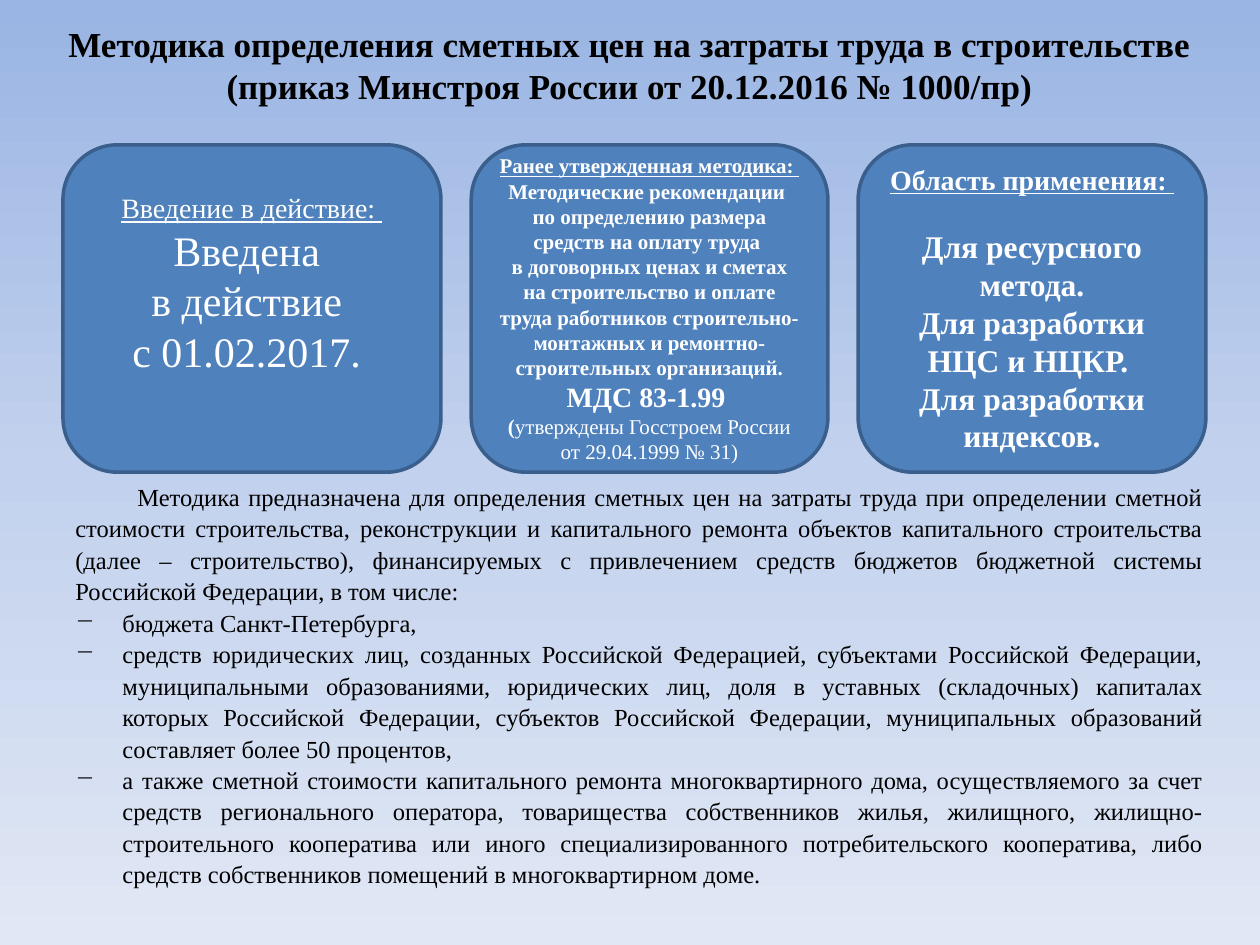
"""Build a slide on the method for estimating labour costs in construction."""
from copy import deepcopy

from pptx import Presentation
from pptx import util as u
from pptx.dml.color import RGBColor
from pptx.enum import shapes, text
from pptx.oxml import ns, xmlchemy
from pptx.oxml import parse_xml

COLORS = {
    "sky": "9AB5E4", "haze": "C2D1ED", "mist": "E1E8F5",
    "card": "4F81BD", "edge": "3A5F8C", "white": "FFFFFF", "black": "000000",
}


def add_text(paragraph, content, size=14, color="black", bold=False, underline=False):
    for index, line in enumerate(content.split("\n")):
        if index:
            paragraph.add_line_break()
        if line:
            run = paragraph.add_run()
            run.text = line
            run.font.name = "Times New Roman"
            run.font.size = u.Pt(size)
            run.font.bold = bold
            run.font.underline = underline
            run.font.color.rgb = RGBColor.from_string(COLORS[color])


def next_paragraph(frame, index, alignment):
    paragraph = frame.add_paragraph() if index else frame.paragraphs[0]
    paragraph.alignment = alignment
    return paragraph


presentation = Presentation()
presentation.slide_width, presentation.slide_height = u.Cm(25.4), u.Cm(19.05)
slide = presentation.slides.add_slide(presentation.slide_layouts[6])

fill = slide.background.fill
fill.gradient()
fill.gradient_angle = 270
first_stop = next(slide.element.iter(ns.qn("a:gs")))
first_stop.addnext(deepcopy(first_stop))
for stop, position, name in zip(fill.gradient_stops, (0, 0.5, 1), ("sky", "haze", "mist")):
    stop.position = position
    stop.color.rgb = RGBColor.from_string(COLORS[name])

title = slide.shapes.add_textbox(u.Cm(0.89), u.Cm(0.33), u.Cm(23.6), u.Cm(1.96))
title.text_frame.word_wrap = True
title.text_frame.vertical_anchor = text.MSO_ANCHOR.MIDDLE
add_text(
    next_paragraph(title.text_frame, 0, text.PP_ALIGN.CENTER),
    "Методика определения сметных цен на затраты труда в строительстве "
    "(приказ Минстроя России от 20.12.2016 № 1000/пр)",
    size=20, bold=True,
)

body_items = [
    "Методика предназначена для определения сметных цен на затраты труда при определении "
    "сметной стоимости строительства, реконструкции и капитального ремонта объектов "
    "капитального строительства (далее – строительство), финансируемых с привлечением "
    "средств бюджетов бюджетной системы Российской Федерации, в том числе:",
    "бюджета Санкт-Петербурга, ",
    "средств юридических лиц, созданных Российской Федерацией, субъектами Российской "
    "Федерации, муниципальными образованиями, юридических лиц, доля в уставных (складочных) "
    "капиталах которых Российской Федерации, субъектов Российской Федерации, муниципальных "
    "образований составляет более 50 процентов, ",
    "а также сметной стоимости капитального ремонта многоквартирного дома, осуществляемого "
    "за счет средств регионального оператора, товарищества собственников жилья, жилищного, "
    "жилищно-строительного кооператива или иного специализированного потребительского "
    "кооператива, либо средств собственников помещений в многоквартирном доме.",
]
body = slide.shapes.add_textbox(u.Cm(1.27), u.Cm(9.55), u.Cm(23.24), u.Cm(8.59))
body.text_frame.word_wrap = True
for index, item in enumerate(body_items):
    paragraph = next_paragraph(body.text_frame, index, text.PP_ALIGN.JUSTIFY)
    paragraph.line_spacing = 1.07
    add_text(paragraph, item)
    properties = paragraph._p.get_or_add_pPr()
    properties.set("marL", str(u.Cm(0.95 if index else 0)))
    properties.set("indent", str(u.Cm(-0.95 if index else 1.25)))
    if index:
        properties.append(parse_xml(f'<a:buChar {ns.nsdecls("a")} char="−"/>'))

heading = {"size": 16, "underline": True}
small = {"size": 12, "bold": True}
large = {"size": 18, "bold": True}
cards = [
    (1.27, 7.62, 1.14, 0, [
        [("Введение в действие: \n", heading),
         ("Введена \nв действие \nс 01.02.2017. ", {"size": 24})],
    ]),
    (9.5, 7.19, 0.13, 0, [
        [("Ранее утвержденная методика: \n", small | {"underline": True}),
         ("Методические рекомендации \nпо определению размера средств на оплату труда \n"
          "в договорных ценах и сметах на строительство и оплате труда работников "
          "строительно-монтажных и ремонтно-строительных организаций. ", small),
         ("МДС 83-1.99 ", {"size": 16, "bold": True})],
        [("(", small), ("утверждены Госстроем России", {"size": 12})],
        [("от 29.04.1999 № 31)", {"size": 12})],
    ]),
    (17.3, 7.01, 0.13, 18, [
        [("Область применения: ", heading | {"bold": True})],
        [("Для ресурсного метода.", large)],
        [("Для разработки НЦС и НЦКР. ", large)],
        [("Для разработки индексов.", large)],
    ]),
]
for left, width, bottom_margin, heading_gap, paragraphs in cards:
    card = slide.shapes.add_shape(
        shapes.MSO_SHAPE.FLOWCHART_ALTERNATE_PROCESS,
        u.Cm(left), u.Cm(2.92), u.Cm(width), u.Cm(6.6),
    )
    card.shadow.inherit = False
    card.fill.solid()
    card.fill.fore_color.rgb = RGBColor.from_string(COLORS["card"])
    card.line.color.rgb = RGBColor.from_string(COLORS["edge"])
    card.line.width = u.Pt(2)
    frame = card.text_frame
    frame.word_wrap = True
    frame.vertical_anchor = text.MSO_ANCHOR.MIDDLE
    frame.margin_bottom = u.Cm(bottom_margin)
    for index, runs in enumerate(paragraphs):
        paragraph = next_paragraph(frame, index, text.PP_ALIGN.CENTER)
        for content, style in runs:
            add_text(paragraph, content, color="white", **style)
    frame.paragraphs[0].space_after = u.Pt(heading_gap)

for line_break in list(slide.element.iter(ns.qn("a:br"))):
    line_break.append(deepcopy(line_break.getprevious().find(ns.qn("a:rPr"))))

presentation.save("out.pptx")
